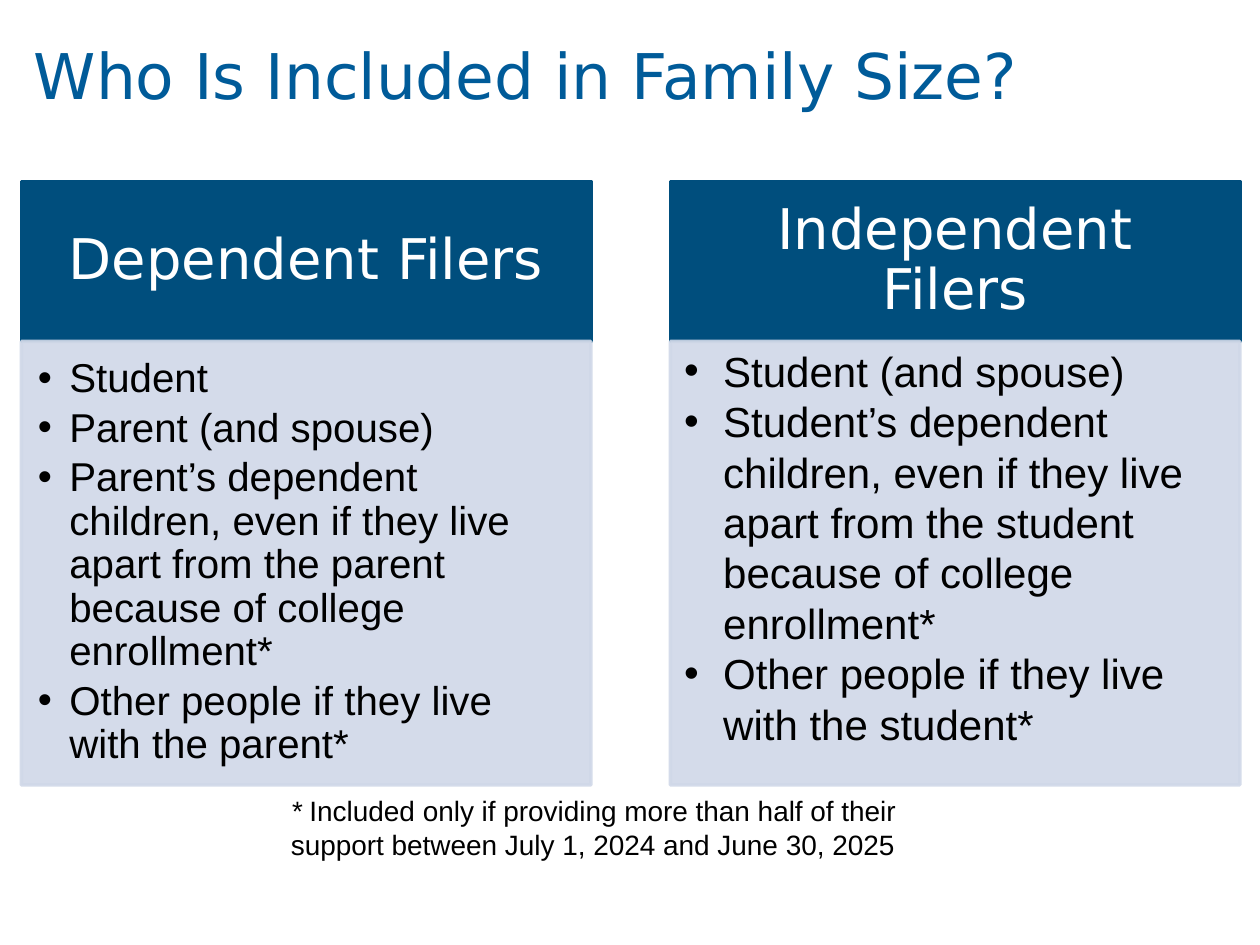
import dataclasses

import lxml.etree
import pptx
import pptx.dml.color
import pptx.enum.shapes
import pptx.enum.text
import pptx.oxml.ns
import pptx.util

Inches = pptx.util.Inches
Pt = pptx.util.Pt
Align = pptx.enum.text.PP_ALIGN
Anchor = pptx.enum.text.MSO_ANCHOR
qn = pptx.oxml.ns.qn


@dataclasses.dataclass(frozen=True)
class Theme:
    title_color: str = "005B99"
    header_fill: str = "004E7D"
    header_text: str = "FFFFFF"
    body_fill: str = "D0D8E8"
    text: str = "000000"
    heading_font: str = "DejaVu Sans"
    body_font: str = "Arial"
    title_size: int = 36
    header_size: int = 32
    dependent_size: int = 23
    independent_size: int = 24
    note_size: int = 16


THEME = Theme()

COLUMN_LEFTS = (0.17, 5.32)
COLUMN_WIDTH = 4.52
HEADER_TOP, HEADER_HEIGHT = 1.44, 1.27
BODY_TOP, BODY_HEIGHT = HEADER_TOP + HEADER_HEIGHT, 3.52

DEPENDENT_MEMBERS = [
    "Student",
    "Parent (and spouse)",
    "Parent’s dependent children, even if they live apart from the parent "
    "because of college enrollment*",
    "Other people if they live with the parent*",
]
INDEPENDENT_MEMBERS = [
    "Student (and spouse)",
    "Student’s dependent children, even if they live apart from the student "
    "because of college enrollment*",
    "Other people if they live with the student*",
]
NOTE = ("Included only if providing more than half of their support "
        "between July 1, 2024 and June 30, 2025")


def rgb(color):
    return pptx.dml.color.RGBColor.from_string(color)


def add_bullet(paragraph, indent):
    properties = paragraph._p.get_or_add_pPr()
    properties.set("marL", str(Inches(indent)))
    properties.set("indent", str(-Inches(indent)))
    lxml.etree.SubElement(properties, qn("a:buFont"), typeface="Arial")
    lxml.etree.SubElement(properties, qn("a:buChar"), char="•")


def write_text(shape, paragraphs, *, size, color=THEME.text, font=THEME.body_font,
               align=Align.LEFT, anchor=Anchor.TOP, insets=(0.1, 0.05, 0.1, 0.05),
               line_spacing=None, space_after=0, bullet_indent=None):
    frame = shape.text_frame
    frame.word_wrap = True
    frame.vertical_anchor = anchor
    frame.margin_left, frame.margin_top, frame.margin_right, frame.margin_bottom = map(
        Inches, insets)
    for index, text in enumerate(paragraphs):
        paragraph = frame.paragraphs[0] if index == 0 else frame.add_paragraph()
        paragraph.alignment = align
        paragraph.line_spacing = line_spacing
        paragraph.space_after = Pt(space_after)
        if bullet_indent:
            add_bullet(paragraph, bullet_indent)
        runs = [(text, False)] if isinstance(text, str) else text
        for content, italic in runs:
            run = paragraph.add_run()
            run.text = content
            run.font.size = Pt(size)
            run.font.name = font
            run.font.italic = italic
            run.font.color.rgb = rgb(color)


def add_panel(slide, left, top, width, height, color, opacity=100):
    shape = slide.shapes.add_shape(
        pptx.enum.shapes.MSO_SHAPE.RECTANGLE,
        Inches(left), Inches(top), Inches(width), Inches(height))
    shape.shadow.inherit = False
    shape.fill.solid()
    shape.fill.fore_color.rgb = rgb(color)
    shape.line.color.rgb = rgb(color)
    shape.line.width = Pt(2)
    if opacity < 100:
        for color_element in shape._element.spPr.iter(qn("a:srgbClr")):
            lxml.etree.SubElement(color_element, qn("a:alpha"), val=str(opacity * 1000))
    return shape


def add_text_box(slide, left, top, width, height):
    return slide.shapes.add_textbox(
        Inches(left), Inches(top), Inches(width), Inches(height))


def add_column(slide, left, heading):
    header = add_panel(slide, left, HEADER_TOP, COLUMN_WIDTH, HEADER_HEIGHT,
                       THEME.header_fill)
    write_text(header, [heading], size=THEME.header_size, color=THEME.header_text,
               font=THEME.heading_font, align=Align.CENTER, anchor=Anchor.MIDDLE,
               insets=(0.25, 0.14, 0.25, 0.14), line_spacing=0.9)
    return add_panel(slide, left, BODY_TOP, COLUMN_WIDTH, BODY_HEIGHT,
                     THEME.body_fill, opacity=90)


def main():
    presentation = pptx.Presentation()
    presentation.slide_width = Inches(10)
    presentation.slide_height = Inches(7.5)
    slide = presentation.slides.add_slide(presentation.slide_layouts[6])

    title = add_text_box(slide, 0.17, 0, 9.67, 1.25)
    write_text(title, ["Who Is Included in Family Size?"], size=THEME.title_size,
               color=THEME.title_color, font=THEME.heading_font,
               anchor=Anchor.MIDDLE, line_spacing=0.9)

    dependent = add_column(slide, COLUMN_LEFTS[0], "Dependent Filers")
    write_text(dependent, DEPENDENT_MEMBERS, size=THEME.dependent_size,
               insets=(0.13, 0.13, 0.18, 0.2), line_spacing=0.9,
               space_after=3.5, bullet_indent=0.25)

    independent = add_column(slide, COLUMN_LEFTS[1], "Independent Filers")
    write_text(independent, INDEPENDENT_MEMBERS, size=THEME.independent_size,
               insets=(0.11, 0.03, 0.11, 0.05), bullet_indent=0.31)

    note = add_text_box(slide, 2.21, 6.25, 5.58, 0.64)
    write_text(note, [[("* ", True), (NOTE, False)]], size=THEME.note_size)

    presentation.save("out.pptx")


if __name__ == "__main__":
    main()
